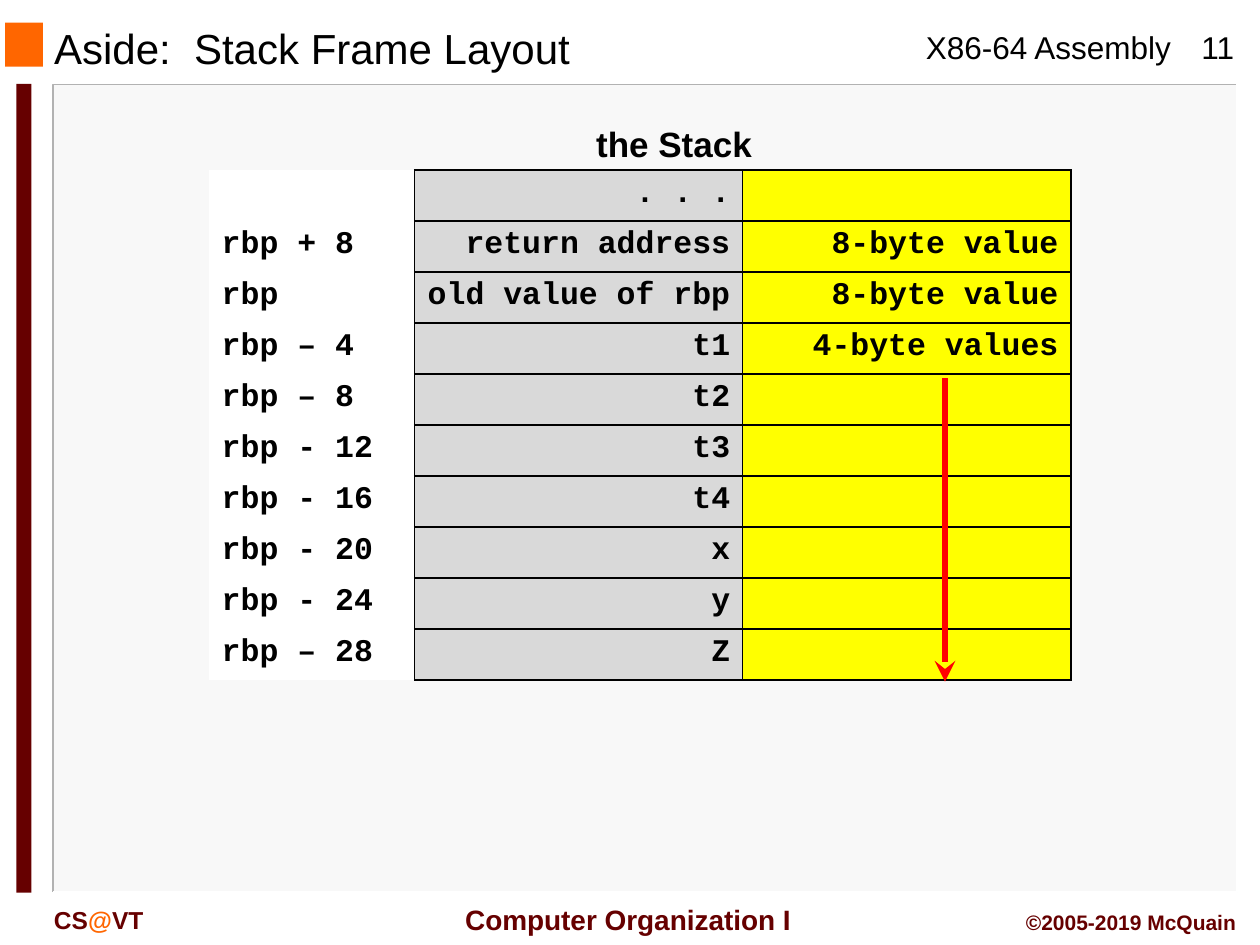
import pptx
import pptx.util
import pptx.dml.color
import pptx.enum.shapes
import pptx.enum.text
import pptx.oxml
import pptx.oxml.ns
import lxml.etree

RGB = pptx.dml.color.RGBColor
ALIGN = pptx.enum.text.PP_ALIGN
MID = pptx.enum.text.MSO_ANCHOR.MIDDLE
TOP = pptx.enum.text.MSO_ANCHOR.TOP
RECT = pptx.enum.shapes.MSO_SHAPE.RECTANGLE
LINE = pptx.enum.shapes.MSO_CONNECTOR.STRAIGHT
qn = pptx.oxml.ns.qn

BLACK = RGB(0x00, 0x00, 0x00)
WHITE = RGB(0xFF, 0xFF, 0xFF)
PALE = RGB(0xF8, 0xF8, 0xF8)
GREY = RGB(0xB2, 0xB2, 0xB2)
ASH = RGB(0xD9, 0xD9, 0xD9)
ORANGE = RGB(0xFF, 0x66, 0x00)
MAROON = RGB(0x66, 0x00, 0x00)
YELLOW = RGB(0xFF, 0xFF, 0x00)
RED = RGB(0xFF, 0x00, 0x00)

# The slide is a grid of 100 columns by 75 rows
COLS, ROWS = 100, 75
UNIT = pptx.util.Inches(10) // COLS

STACK = [
    ("", ". . .", ""),
    ("rbp + 8", "return address", "8-byte value"),
    ("rbp", "old value of rbp", "8-byte value"),
    ("rbp – 4", "t1", "4-byte values"),
    ("rbp – 8", "t2", ""),
    ("rbp - 12", "t3", ""),
    ("rbp - 16", "t4", ""),
    ("rbp - 20", "x", ""),
    ("rbp - 24", "y", ""),
    ("rbp – 28", "Z", ""),
]


def grid(*cells):
    return [round(cell * UNIT) for cell in cells]


def style(run, size, color=BLACK, bold=False, font="Arial"):
    run.font.name = font
    run.font.size = pptx.util.Pt(size)
    run.font.bold = bold
    run.font.color.rgb = color


def block(slide, box, color):
    shape = slide.shapes.add_shape(RECT, *grid(*box))
    shape.shadow.inherit = False
    shape.fill.solid()
    shape.fill.fore_color.rgb = color
    shape.line.fill.background()


def label(slide, box, parts, size, align=ALIGN.LEFT, bold=True, anchor=TOP, wrap=True):
    """Write (text, colour) parts as one paragraph in a text box."""
    frame = slide.shapes.add_textbox(*grid(*box)).text_frame
    frame.word_wrap = wrap
    frame.vertical_anchor = anchor
    para = frame.paragraphs[0]
    para.alignment = align
    for text, color in parts:
        run = para.add_run()
        run.text = text
        style(run, size, color, bold)


def edge(slide, points, color):
    """Draw an open bent line through grid points."""
    first, *rest = [grid(*point) for point in points]
    pen = slide.shapes.build_freeform(*first)
    pen.add_line_segments(rest, close=False)
    shape = pen.convert_to_shape()
    shape.shadow.inherit = False
    shape.fill.background()
    shape.line.color.rgb = color
    shape.line.width = pptx.util.Pt(1)


def panel(slide, box):
    left, top, width, height = box
    right, base = left + width, top + height
    block(slide, box, PALE)
    edge(slide, [(right, top), (left, top), (left, base)], GREY)
    edge(slide, [(right, top), (right, base), (left, base)], WHITE)


def header(slide, box):
    left, top, width, height = box
    block(slide, (left + 0.4, top + 0.1, 3, 3.5), ORANGE)
    label(slide, (left + 72.5, top, 21.7, height), [("X86-64 Assembly", BLACK)],
          18, bold=False, wrap=False)
    label(slide, (left + width - 6.7, top, 6.7, height), [("11", BLACK)],
          18, ALIGN.CENTER, bold=False)
    title = slide.shapes.title
    title.left, title.top, title.width, title.height = grid(
        left + 3.3, top + 0.2, 63.3, 3.8)
    frame = title.text_frame
    frame.text = "Aside:  Stack Frame Layout"
    frame.word_wrap = True
    frame.vertical_anchor = MID
    frame.paragraphs[0].alignment = ALIGN.LEFT
    style(frame.paragraphs[0].runs[0], 24)


def footer(slide, box):
    left, top, width, height = box
    label(slide, (left, top + 0.2, 15, 3.3),
          [("CS", MAROON), ("@", ORANGE), ("VT", MAROON)], 14)
    label(slide, (left + 32, top, 29.1, height),
          [("Computer Organization I", MAROON)], 16, ALIGN.CENTER,
          anchor=MID, wrap=False)
    label(slide, (left + width - 20.8, top + 0.6, 20.8, 3),
          [("©2005-2019 McQuain", MAROON)], 12, ALIGN.RIGHT)


def border(cell, sides):
    """Rule the named sides of a cell and clear the others."""
    props = cell._tc.get_or_add_tcPr()
    for spot, side in enumerate("LRTB"):
        line = lxml.etree.Element(qn("a:ln" + side), w=str(pptx.util.Pt(1)))
        if side in sides:
            fill = lxml.etree.SubElement(line, qn("a:solidFill"))
            lxml.etree.SubElement(fill, qn("a:srgbClr"), val=str(BLACK))
        else:
            lxml.etree.SubElement(line, qn("a:noFill"))
        props.insert(spot, line)


def stack(slide, box):
    left, top, width, height = box
    looks = [(16.3, WHITE, ALIGN.LEFT, "R"),
             (26.05, ASH, ALIGN.RIGHT, "LRTB"),
             (26.05, YELLOW, ALIGN.RIGHT, "LRTB")]
    table = slide.shapes.add_table(len(STACK), len(looks), *grid(*box)).table
    table.first_row = table.horz_banding = False
    for col, (span, fill, align, sides) in enumerate(looks):
        table.columns[col].width = grid(span)[0]
        for row, texts in enumerate(STACK):
            cell = table.cell(row, col)
            cell.fill.solid()
            cell.fill.fore_color.rgb = fill
            border(cell, sides)
            para = cell.text_frame.paragraphs[0]
            para.alignment = align
            if texts[col]:
                para.text = texts[col]
                style(para.runs[0], 18, bold=True, font="Courier New")

    # Heading over the table
    label(slide, (left + 27.1, top - 4.3, 19.6, 4.4), [("the Stack", BLACK)],
          20, ALIGN.CENTER)

    # Arrow down the 4-byte values
    mid = left + 58.4
    arrow = slide.shapes.add_connector(
        LINE, *grid(mid, top + 16.5, mid, top + height + 0.1))
    arrow.line.color.rgb = RED
    arrow.line.width = pptx.util.Pt(4)
    lxml.etree.SubElement(arrow.line._get_or_add_ln(), qn("a:tailEnd"), type="stealth")
    lxml.etree.SubElement(arrow._element.spPr, qn("a:effectLst"))


def main():
    deck = pptx.Presentation()
    deck.slide_width, deck.slide_height = grid(COLS, ROWS)
    slide = deck.slides.add_slide(deck.slide_layouts[5])
    panel(slide, (4.2, 6.7, 94, 64.1))
    block(slide, (1.3, 6.65, 1.2, 64.2), MAROON)
    header(slide, (0, 1.7, COLS, 4))
    footer(slide, (3.3, 71.1, 95.8, 3.7))
    stack(slide, (16.6, 13.5, 68.4, 40.5))
    deck.save("out.pptx")


if __name__ == "__main__":
    main()
